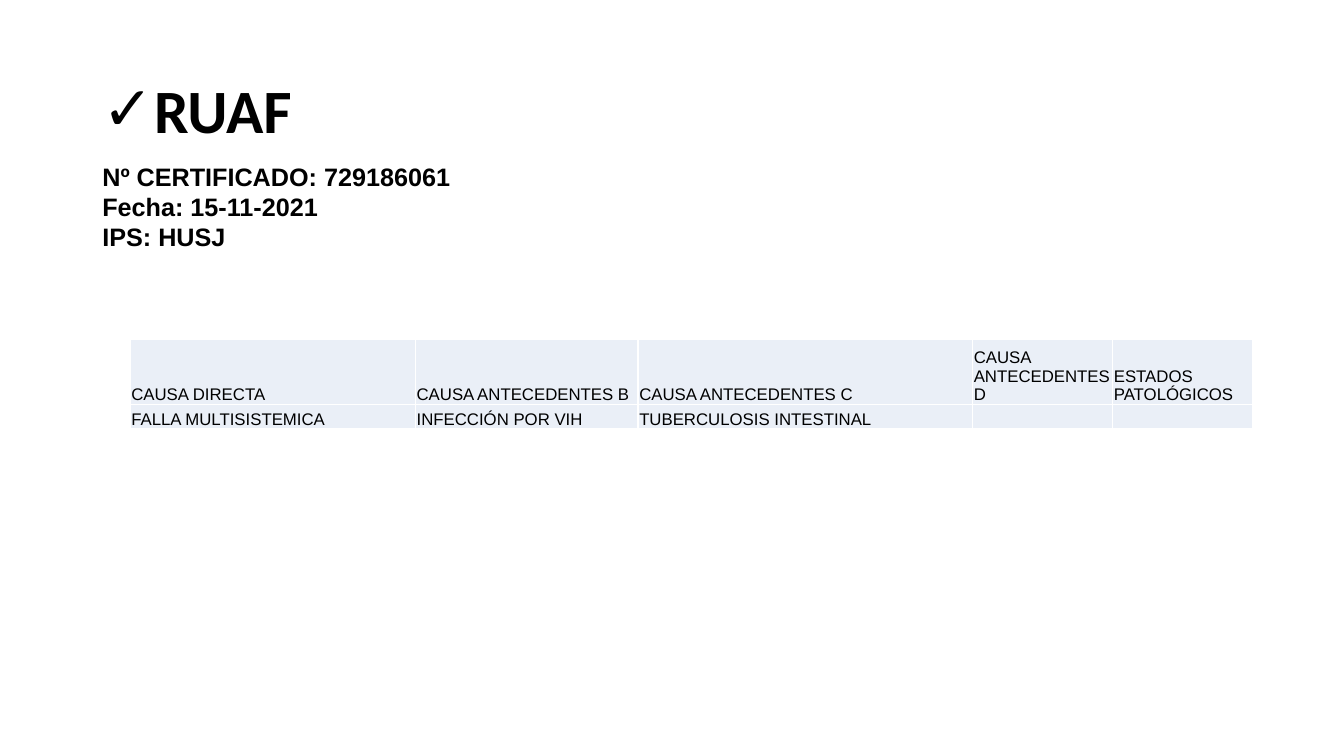
from lxml import etree
from pptx import Presentation
from pptx.dml.color import RGBColor
from pptx.enum.text import MSO_ANCHOR, MSO_AUTO_SIZE, PP_ALIGN
from pptx.oxml.ns import qn
from pptx.util import Cm, Pt

MIDDLE, BOTTOM = MSO_ANCHOR.MIDDLE, MSO_ANCHOR.BOTTOM
LEFT = PP_ALIGN.LEFT
FIXED, GROW = MSO_AUTO_SIZE.NONE, MSO_AUTO_SIZE.SHAPE_TO_FIT_TEXT

NOTES = ["Nº CERTIFICADO: 729186061", "Fecha: 15-11-2021", "IPS: HUSJ"]
CAUSES = [
    ["CAUSA DIRECTA", "CAUSA ANTECEDENTES B", "CAUSA ANTECEDENTES C",
     "CAUSA ANTECEDENTES D", "ESTADOS PATOLÓGICOS"],
    ["FALLA MULTISISTEMICA", "INFECCIÓN POR VIH", "TUBERCULOSIS INTESTINAL", "", ""],
]
WIDTHS = [7.19, 5.61, 8.43, 3.53, 3.53]
HEIGHTS = [1.63, 0.61]


def color(text):
    """Turn a hex string into a colour."""
    return RGBColor.from_string(text)


def apply(item, values):
    """Set each named value on an item."""
    for name, value in values.items():
        setattr(item, name, value)


class Deck:
    """Hold the style and the current slide."""

    ink, fill, rule = "000000", "EAEFF7", "FFFFFF"
    head = {"name": "Calibri", "size": Pt(44), "bold": True}
    note = {"name": "Arial", "size": Pt(18), "bold": True}
    grid = {"name": "Arial", "size": Pt(12), "bold": False}

    def __init__(self):
        """Start a wide file with one titled slide."""
        self.file = Presentation()
        apply(self.file, {"slide_width": Cm(33.87), "slide_height": Cm(19.05)})
        self.slide = self.file.slides.add_slide(self.file.slide_layouts[5])

    def label(self, para, text, style):
        """Add one styled run to a paragraph."""
        run = para.add_run()
        run.text = text
        apply(run.font, style)
        run.font.color.rgb = color(self.ink)

    def title(self, text, left, top, width, height):
        """Fill the title with a ticked line."""
        shape = self.slide.shapes.title
        apply(shape, {"left": Cm(left), "top": Cm(top),
                      "width": Cm(width), "height": Cm(height)})
        frame = shape.text_frame
        apply(frame, {"vertical_anchor": MIDDLE, "word_wrap": True, "auto_size": FIXED})
        para = frame.paragraphs[0]
        apply(para, {"alignment": LEFT, "line_spacing": 0.9})
        self.label(para, text, self.head)
        props = para._p.get_or_add_pPr()
        props.set("marL", str(Cm(0.79)))
        props.set("indent", str(-Cm(0.79)))
        etree.SubElement(props, qn("a:buFont"), typeface="Arial")
        etree.SubElement(props, qn("a:buChar"), char="✓")

    def text(self, lines, left, top, width, height):
        """Add a text box with one paragraph per line."""
        box = self.slide.shapes.add_textbox(Cm(left), Cm(top), Cm(width), Cm(height))
        frame = box.text_frame
        apply(frame, {"word_wrap": True, "auto_size": GROW})
        for i, line in enumerate(lines):
            para = frame.add_paragraph() if i else frame.paragraphs[0]
            self.label(para, line, self.note)

    def border(self, cell):
        """Draw a thin line on all sides of a cell."""
        props = cell._tc.get_or_add_tcPr()
        for i, side in enumerate("LRTB"):
            line = etree.Element(qn(f"a:ln{side}"), w=str(Pt(1)))
            solid = etree.SubElement(line, qn("a:solidFill"))
            etree.SubElement(solid, qn("a:srgbClr"), val=self.rule)
            props.insert(i, line)

    def cell(self, cell, text):
        """Fill and format one table cell."""
        apply(cell, {"vertical_anchor": BOTTOM, "margin_left": Cm(0.03),
                     "margin_right": Cm(0.03), "margin_top": Cm(0.03),
                     "margin_bottom": 0})
        cell.fill.solid()
        cell.fill.fore_color.rgb = color(self.fill)
        self.border(cell)
        para = cell.text_frame.paragraphs[0]
        if text:
            self.label(para, text, self.grid)
        else:
            etree.SubElement(para._p, qn("a:endParaRPr"), sz="1200")

    def table(self, rows, widths, heights, left, top):
        """Add a table from rows of text."""
        table = self.slide.shapes.add_table(
            len(rows), len(widths), Cm(left), Cm(top),
            Cm(sum(widths)), Cm(sum(heights))).table
        for col, width in zip(table.columns, widths):
            col.width = Cm(width)
        for row, height, texts in zip(table.rows, heights, rows):
            row.height = Cm(height)
            for cell, text in zip(row.cells, texts):
                self.cell(cell, text)


def main():
    """Build the slide and save it."""
    deck = Deck()
    deck.title("RUAF", 2.33, 1.01, 29.21, 3.68)
    deck.text(NOTES, 2.33, 3.94, 24.13, 2.57)
    deck.table(CAUSES, WIDTHS, HEIGHTS, 3.28, 8.56)
    deck.file.save("out.pptx")


if __name__ == "__main__":
    main()
